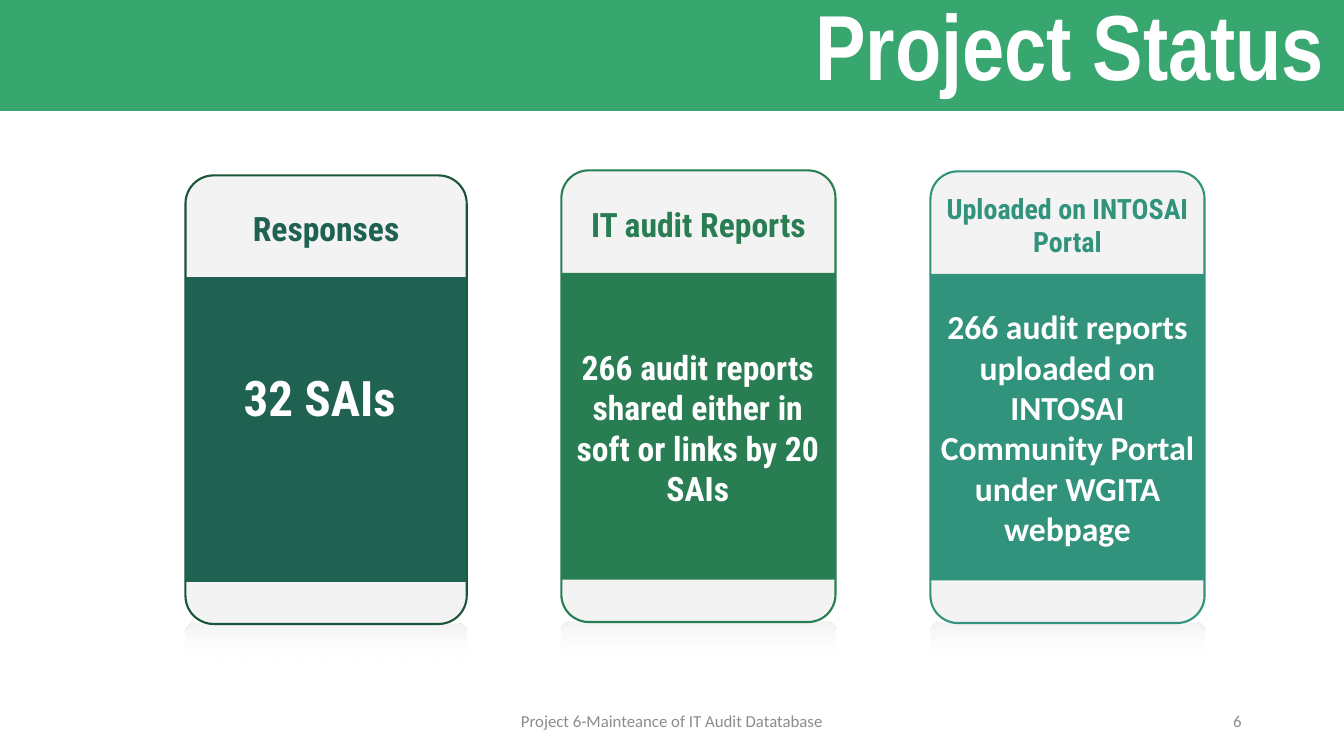
from dataclasses import dataclass

import lxml.etree
import pptx
import pptx.dml.color
import pptx.enum.shapes
import pptx.enum.text
import pptx.oxml
import pptx.oxml.ns
import pptx.util

Pt = pptx.util.Pt
SHAPES = pptx.enum.shapes.MSO_SHAPE
ALIGN = pptx.enum.text.PP_ALIGN
qn = pptx.oxml.ns.qn


def rgb(value):
    return pptx.dml.color.RGBColor.from_string(value)


@dataclass(frozen=True)
class Theme:
    banner: str = "37A76F"
    white: str = "FFFFFF"
    pale: str = "F3F3F3"
    grey: str = "8C8C8C"
    pine: str = "206252"
    pine_edge: str = "1C5438"
    green: str = "297D53"
    teal: str = "31937B"
    title_font: str = "Arial Narrow"
    card_font: str = "Roboto Condensed"
    plain_font: str = "Calibri"
    title_size: int = 66
    figure_size: int = 35
    card_size: int = 24
    small_card_size: int = 20
    footer_size: int = 12


class StatusSlide:
    def __init__(self, theme, width, height):
        self.theme = theme
        self.deck = pptx.Presentation()
        self.deck.slide_width, self.deck.slide_height = Pt(width), Pt(height)
        self.slide = self.deck.slides.add_slide(self.deck.slide_layouts[6])

    def block(self, preset, box, fill=None, edge=None, edge_width=1.5):
        block = self.slide.shapes.add_shape(preset, *map(Pt, box))
        block.shadow.inherit = False
        if preset == SHAPES.ROUNDED_RECTANGLE:
            block.adjustments[0] = 0.1
        if fill:
            block.fill.solid()
            block.fill.fore_color.rgb = rgb(fill)
        if edge:
            block.line.color.rgb = rgb(edge)
            block.line.width = Pt(edge_width)
        else:
            block.line.fill.background()
        return block

    def set_words(self, holder, words, size, color, font, bold=True,
                  align=ALIGN.CENTER, spacing=None, outline=None):
        frame = holder.text_frame
        frame.word_wrap = True
        frame.vertical_anchor = pptx.enum.text.MSO_ANCHOR.MIDDLE
        paragraph = frame.paragraphs[0]
        paragraph.alignment = align
        if spacing:
            paragraph.line_spacing = spacing
        run = paragraph.add_run()
        run.text = words
        for key, value in {"name": font, "size": Pt(size), "bold": bold}.items():
            setattr(run.font, key, value)
        run.font.color.rgb = rgb(color)
        if outline:
            stroke = lxml.etree.Element(qn("a:ln"), w=str(Pt(0.75)))
            paint = lxml.etree.SubElement(stroke, qn("a:solidFill"))
            lxml.etree.SubElement(paint, qn("a:srgbClr"), val=outline)
            run.font._element.insert(0, stroke)

    def text(self, box, words, *style, **options):
        holder = self.slide.shapes.add_textbox(*map(Pt, box))
        self.set_words(holder, words, *style, **options)

    def reflection(self, box):
        reflection = self.block(SHAPES.ROUNDED_RECTANGLE, box)
        reflection.fill.gradient()
        reflection.fill.gradient_angle = 270
        stops = reflection.fill.gradient_stops
        for stop, color, position in zip(
                stops, (self.theme.pale, self.theme.white), (0, 0.4)):
            stop.color.rgb = rgb(color)
            stop.position = position
        clear = stops[1]._gs.find(qn("a:srgbClr"))
        lxml.etree.SubElement(clear, qn("a:alpha"), val="0")

    def card(self, box, color, edge, heading, heading_size, outline,
             body, body_size, body_font, body_span=None):
        left, top, width, height = box
        theme = self.theme
        self.reflection((left, top + height, width, height * 0.214))
        self.block(SHAPES.ROUNDED_RECTANGLE, box, theme.pale, edge)
        panel = self.block(
            SHAPES.RECTANGLE,
            (left, top + height * 0.227, width, height * 0.679), color)
        self.text((left, top + height * 0.058, width, height * 0.121),
                  heading, heading_size, color, theme.card_font, outline=outline)
        style = (body, body_size, theme.white, body_font)
        if body_span:
            body_top, body_height = body_span
            self.text((left - 0.5, body_top, width, body_height), *style)
        else:
            self.set_words(panel, *style)


def main():
    theme = Theme()
    status = StatusSlide(theme, 960, 540)
    status.block(SHAPES.RECTANGLE, (0, 0, 960, 79.2),
                 theme.banner, theme.banner, 1)
    for box, words, align in (
            ((318, 500.5, 324, 28.8),
             "Project 6-Mainteance of IT Audit Datatabase", ALIGN.CENTER),
            ((678, 500.5, 216, 28.8), "6", ALIGN.RIGHT)):
        status.text(box, words, theme.footer_size, theme.grey,
                    theme.plain_font, bold=False, align=align)
    status.text((58.3, -15.8, 895, 104.4), "Project Status", theme.title_size,
                theme.white, theme.title_font, align=ALIGN.RIGHT, spacing=0.9)

    status.card((132.5, 125.3, 200.9, 320.4), theme.pine, theme.pine_edge,
                "Responses", theme.card_size, theme.pine,
                "32 SAIs ", theme.figure_size, theme.card_font, (244.8, 77.8))
    status.card((401, 121.7, 195.8, 322.6), theme.green, theme.green,
                "IT audit Reports", theme.card_size, theme.banner,
                "266 audit reports shared either in soft or links by 20 SAIs",
                theme.card_size, theme.card_font, (221.8, 167))
    status.card((664.6, 122.4, 195.8, 322.6), theme.teal, theme.teal,
                "Uploaded on INTOSAI Portal", theme.small_card_size, theme.teal,
                "266 audit reports uploaded on INTOSAI Community Portal "
                "under WGITA webpage", theme.card_size, theme.plain_font)
    status.deck.save("out.pptx")


if __name__ == "__main__":
    main()
